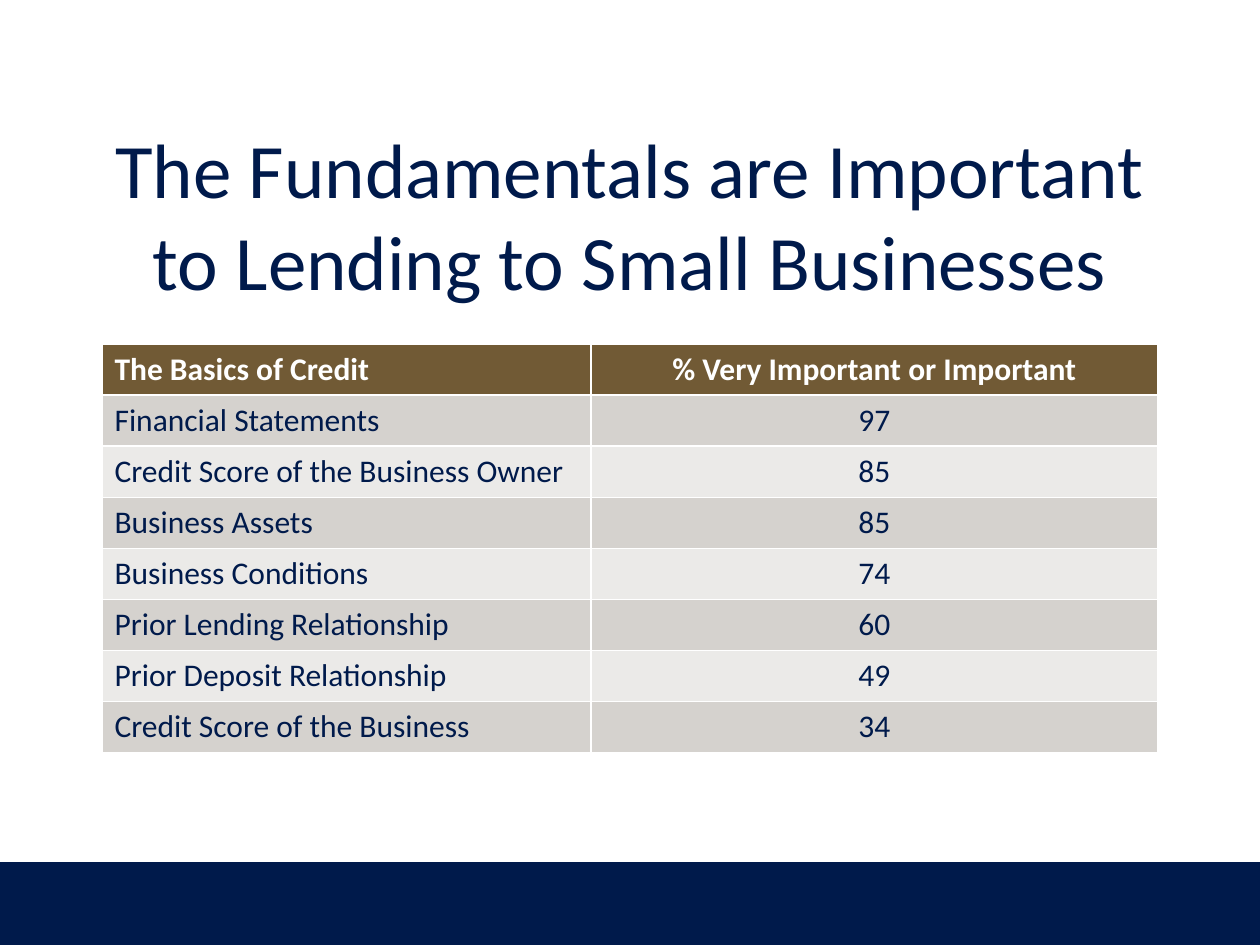
"""Build a slide with a table of what matters in lending to small businesses."""
from pptx import Presentation, util as u
from pptx.dml.color import RGBColor
from pptx.enum import shapes, text

NAVY = RGBColor(0x00, 0x1A, 0x4B)
BROWN = RGBColor(0x71, 0x5A, 0x35)
DARK = RGBColor(0xD5, 0xD2, 0xCE)
LIGHT = RGBColor(0xEB, 0xEA, 0xE8)
WHITE = RGBColor(0xFF, 0xFF, 0xFF)

ROWS = [
    ("The Basics of Credit", "% Very Important or Important"),
    ("Financial Statements", "97"),
    ("Credit Score of the Business Owner", "85"),
    ("Business Assets", "85"),
    ("Business Conditions", "74"),
    ("Prior Lending Relationship", "60"),
    ("Prior Deposit Relationship", "49"),
    ("Credit Score of the Business", "34"),
]
COLS = [489, 567]
HIGH = 51


def px(*nums):
    return [u.Emu(round(n * 914400 / 126)) for n in nums]


def style(para, size, color, bold, align):
    para.alignment = align
    font = para.font
    font.name, font.size, font.bold = "Calibri", u.Pt(size), bold
    font.color.rgb = color


deck = Presentation()
deck.slide_width, deck.slide_height = px(1260, 945)
slide = deck.slides.add_slide(deck.slide_layouts[5])

band = slide.shapes.add_shape(shapes.MSO_SHAPE.RECTANGLE, *px(0, 862, 1260, 83))
band.shadow.inherit = False
band.fill.solid()
band.fill.fore_color.rgb = NAVY
band.line.fill.background()

title = slide.shapes.title
title.left, title.top, title.width, title.height = px(63, 135, 1134, 158)
frame = title.text_frame
frame.text = "The Fundamentals are Important to Lending to Small Businesses"
frame.auto_size = text.MSO_AUTO_SIZE.NONE
frame.vertical_anchor = text.MSO_ANCHOR.MIDDLE
style(frame.paragraphs[0], 44, NAVY, False, text.PP_ALIGN.CENTER)

box = px(102, 344, sum(COLS), HIGH * len(ROWS))
table = slide.shapes.add_table(len(ROWS), len(COLS), *box).table
for col, wide in zip(table.columns, px(*COLS)):
    col.width = wide

for r, row in enumerate(ROWS):
    head = r == 0
    fill = BROWN if head else DARK if r % 2 else LIGHT
    for c, words in enumerate(row):
        cell = table.cell(r, c)
        cell.text = words
        cell.fill.solid()
        cell.fill.fore_color.rgb = fill
        align = text.PP_ALIGN.CENTER if c else text.PP_ALIGN.LEFT
        style(cell.text_frame.paragraphs[0], 18, WHITE if head else NAVY, head, align)

deck.save("out.pptx")
